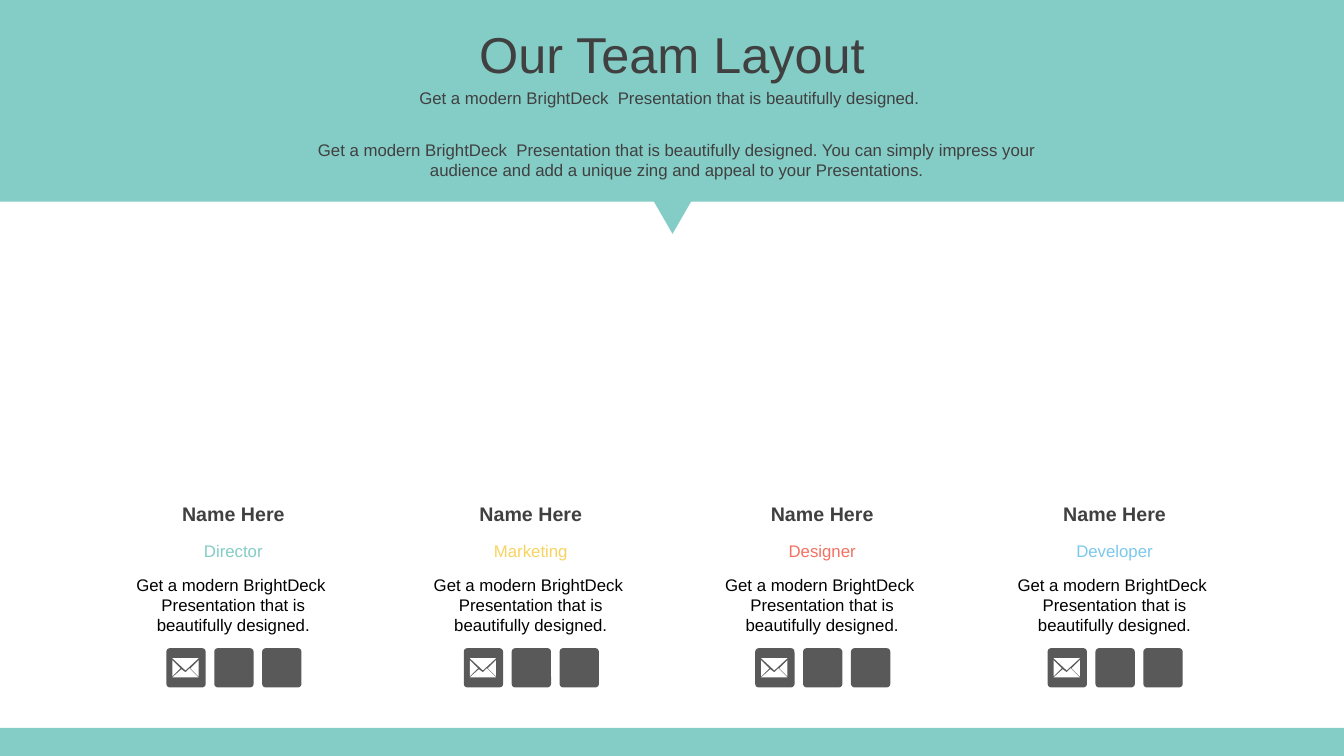
from pptx import Presentation
from pptx.dml.color import RGBColor
from pptx.enum.shapes import MSO_SHAPE as SHAPE
from pptx.enum.text import MSO_ANCHOR as ANCHOR, PP_ALIGN as ALIGN
from pptx.util import Inches, Pt

TEAL, DARK, GREY = "84CCC6", "404040", "595959"
WIDTH = 13.33
INTRO = "Get a modern BrightDeck  Presentation that is beautifully designed."

prs = Presentation()
prs.slide_width, prs.slide_height = Inches(WIDTH), Inches(7.5)
s = prs.slides.add_slide(prs.slide_layouts[6])


def paint(sp, color):
    sp.shadow.inherit = False
    sp.fill.solid()
    sp.fill.fore_color.rgb = RGBColor.from_string(color)
    sp.line.fill.background()
    return sp


def add_text(text, x, y, w, h, size=12, color=DARK, bold=False,
             anchor=ANCHOR.TOP, spacing=1.0):
    tf = s.shapes.add_textbox(Inches(x), Inches(y), Inches(w), Inches(h)).text_frame
    tf.word_wrap = True
    tf.vertical_anchor = anchor
    p = tf.paragraphs[0]
    p.alignment = ALIGN.CENTER
    p.line_spacing = spacing
    r = p.add_run()
    r.text = text
    r.font.name, r.font.size, r.font.bold = "Arial", Pt(size), bold
    r.font.color.rgb = RGBColor.from_string(color)


# Header and footer bands, with the pointer below the header
for kind, x, y, w, h in [
    (SHAPE.RECTANGLE, 0, 7.22, WIDTH, 0.28),
    (SHAPE.RECTANGLE, 0, 0, WIDTH, 2),
    (SHAPE.ISOSCELES_TRIANGLE, 6.48, 1.99, 0.38, 0.33),
]:
    sp = paint(s.shapes.add_shape(kind, Inches(x), Inches(y), Inches(w), Inches(h)), TEAL)
sp.rotation = 180

# Header text
add_text("Our Team Layout", 0, 0.29, WIDTH, 0.55, size=36,
         anchor=ANCHOR.MIDDLE, spacing=0.9)
add_text(INTRO + " ", 0, 0.86, WIDTH, 0.24, anchor=ANCHOR.MIDDLE, spacing=0.9)
add_text(INTRO + " You can simply impress your audience and add a unique zing "
         "and appeal to your Presentations.", 2.89, 1.34, 7.65, 0.58)

# Envelope parts in hundredths of an inch from the tile's corner
ENVELOPE = [
    [(6, 10), (19, 22), (32, 10)],
    [(6, 12), (6, 28), (14, 20)],
    [(32, 12), (25, 19), (24, 20), (32, 28)],
    [(23, 20), (19, 24), (15, 21), (6, 29), (32, 29)],
]
TILE, TILE_TOP, TILE_STEP = 0.39, 6.43, 0.475

# Team members: left edge, role, role colour
members = [
    (1.23, "Director", TEAL),
    (4.18, "Marketing", "F8D45E"),
    (7.07, "Designer", "F27161"),
    (9.97, "Developer", "7CC8EC"),
]
for left, role, color in members:
    add_text("Name Here", left, 4.93, 2.17, 0.35, size=14, bold=True)
    add_text(role, left, 5.29, 2.17, 0.35, color=color, anchor=ANCHOR.MIDDLE)
    add_text(INTRO, left, 5.65, 2.17, 0.71, color="000000")

    # Contact tiles, the first with an envelope
    tile_left = left + 0.42
    for i in range(3):
        sp = s.shapes.add_shape(SHAPE.ROUNDED_RECTANGLE, Inches(tile_left + i * TILE_STEP),
                                Inches(TILE_TOP), Inches(TILE), Inches(TILE))
        sp.adjustments[0] = 0.09
        paint(sp, GREY)
    fb = s.shapes.build_freeform(*ENVELOPE[0][0], scale=Inches(0.01))
    fb.add_line_segments(ENVELOPE[0][1:])
    for part in ENVELOPE[1:]:
        fb.move_to(*part[0])
        fb.add_line_segments(part[1:])
    paint(fb.convert_to_shape(Inches(tile_left), Inches(TILE_TOP)), "FFFFFF")

prs.save("out.pptx")
